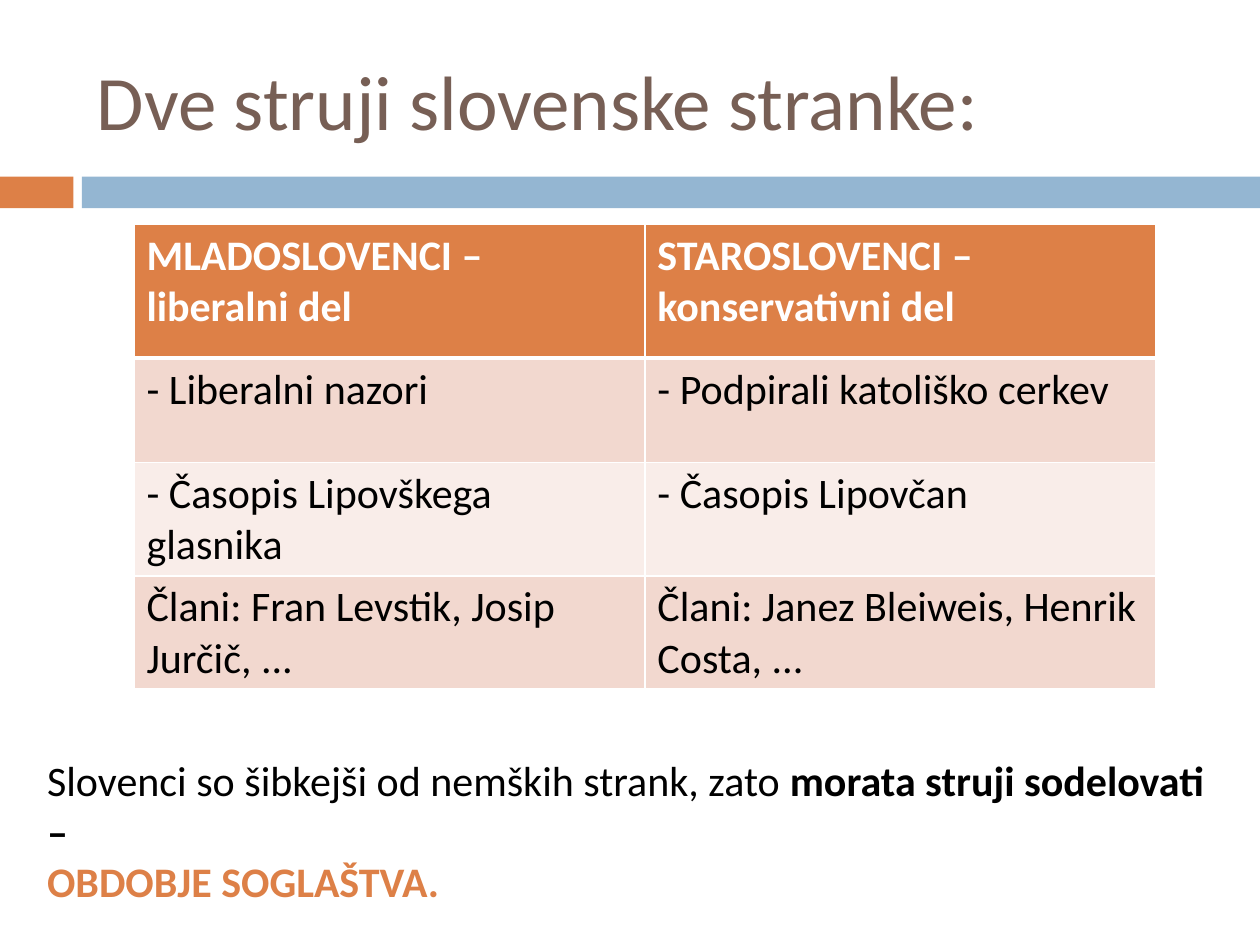
from lxml.etree import SubElement
from pptx import Presentation
from pptx.dml.color import RGBColor
from pptx.enum.shapes import MSO_SHAPE
from pptx.enum.text import MSO_ANCHOR
from pptx.oxml.ns import qn
from pptx.util import Cm, Pt

ORANGE = RGBColor(0xDD, 0x80, 0x47)
BLUE = RGBColor(0x94, 0xB6, 0xD2)
BROWN = RGBColor(0x77, 0x5F, 0x55)
ROSE = RGBColor(0xF2, 0xD8, 0xCF)
PALE = RGBColor(0xF9, 0xED, 0xE9)
WHITE = RGBColor(0xFF, 0xFF, 0xFF)
BLACK = RGBColor(0, 0, 0)


def style(run, size, color, bold=False):
    run.font.name = "Calibri"
    run.font.size = Pt(size)
    run.font.bold = bold
    run.font.color.rgb = color


def border(cell, side, width):
    line = SubElement(cell._tc.get_or_add_tcPr(), qn("a:ln" + side), w=str(Pt(width)))
    fill = SubElement(line, qn("a:solidFill"))
    SubElement(fill, qn("a:srgbClr"), val=str(WHITE))


deck = Presentation()
deck.slide_width = Cm(25.4)
deck.slide_height = Cm(19.05)
slide = deck.slides.add_slide(deck.slide_layouts[6])
shapes = slide.shapes

for left, width, color in [(0, 1.48, ORANGE), (1.65, 23.75, BLUE)]:
    bar = shapes.add_shape(MSO_SHAPE.RECTANGLE, Cm(left), Cm(3.56), Cm(width), Cm(0.64))
    bar.shadow.inherit = False
    bar.fill.solid()
    bar.fill.fore_color.rgb = color
    bar.line.fill.background()

title = shapes.add_textbox(Cm(1.7), Cm(0.64), Cm(22.66), Cm(2.74)).text_frame
title.word_wrap = True
title.vertical_anchor = MSO_ANCHOR.MIDDLE
title.text = "Dve struji slovenske stranke:"
style(title.paragraphs[0].runs[0], 44, BROWN)

rows = [
    ("MLADOSLOVENCI – liberalni del", "STAROSLOVENCI – konservativni del"),
    ("- Liberalni nazori", "- Podpirali katoliško cerkev"),
    ("- Časopis Lipovškega glasnika", "- Časopis Lipovčan"),
    ("Člani: Fran Levstik, Josip Jurčič, ...", "Člani: Janez Bleiweis, Henrik Costa, ..."),
]
fills = [ORANGE, ROSE, PALE, ROSE]
highs = [2.7, 2.1, 2.1, 2.1]
table = shapes.add_table(4, 2, Cm(2.7), Cm(4.52), Cm(20.6), Cm(sum(highs))).table
for r, texts in enumerate(rows):
    table.rows[r].height = Cm(highs[r])
    head = r == 0
    for c, text in enumerate(texts):
        cell = table.cell(r, c)
        cell.text = text
        style(cell.text_frame.paragraphs[0].runs[0], 24, WHITE if head else BLACK, head)
        for side in "LRTB":
            thick = (r, side) in [(0, "B"), (1, "T")]
            border(cell, side, 3 if thick else 1)
        cell.fill.solid()
        cell.fill.fore_color.rgb = fills[r]

note = shapes.add_textbox(Cm(0.7), Cm(15.09), Cm(24.2), Cm(2.31)).text_frame
note.word_wrap = True
first = note.paragraphs[0]
last = note.add_paragraph()
for para, text, color, bold in [
    (first, "Slovenci so šibkejši od nemških strank, zato ", BLACK, False),
    (first, "morata struji sodelovati –", BLACK, True),
    (last, "OBDOBJE SOGLAŠTVA.", ORANGE, True),
]:
    run = para.add_run()
    run.text = text
    style(run, 24, color, bold)

deck.save("out.pptx")
